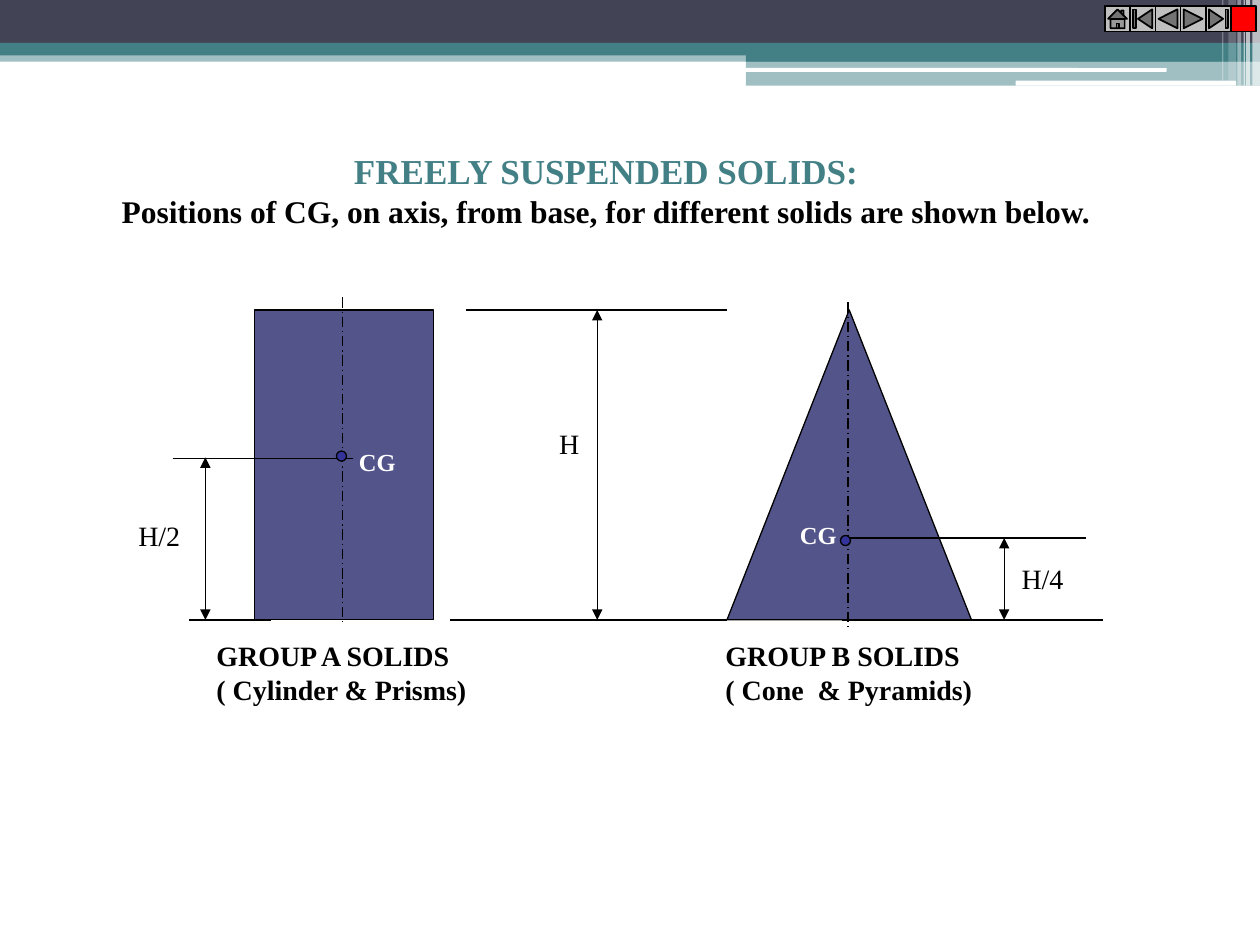
from lxml import etree
from pptx import Presentation
from pptx.dml.color import RGBColor
from pptx.enum.dml import MSO_LINE
from pptx.enum.shapes import MSO_CONNECTOR, MSO_SHAPE
from pptx.enum.text import MSO_ANCHOR, MSO_AUTO_SIZE, PP_ALIGN
from pptx.oxml.ns import qn
from pptx.util import Inches, Pt

RECT = MSO_SHAPE.RECTANGLE
ROUND = MSO_SHAPE.ROUNDED_RECTANGLE
CONE = MSO_SHAPE.ISOSCELES_TRIANGLE
OVAL = MSO_SHAPE.OVAL
BUTTONS = [
    MSO_SHAPE.ACTION_BUTTON_HOME,
    MSO_SHAPE.ACTION_BUTTON_BEGINNING,
    MSO_SHAPE.ACTION_BUTTON_BACK_OR_PREVIOUS,
    MSO_SHAPE.ACTION_BUTTON_FORWARD_OR_NEXT,
    MSO_SHAPE.ACTION_BUTTON_END,
    MSO_SHAPE.ACTION_BUTTON_CUSTOM,
]
STRAIGHT = MSO_CONNECTOR.STRAIGHT
DASH = MSO_LINE.LONG_DASH_DOT
CENTER = PP_ALIGN.CENTER
TOP_ANCHOR = MSO_ANCHOR.TOP
GROW = MSO_AUTO_SIZE.SHAPE_TO_FIT_TEXT

FONT = "Times New Roman"
COLORS = {
    "teal": "438086",
    "slate": "424456",
    "solid": "53548A",
    "dot": "333399",
    "gray": "C0C0C0",
    "red": "FF0000",
    "black": "000000",
    "white": "FFFFFF",
}
TOP, BASE = 2.46, 4.92  # levels of the solids


def rgb(name):
    return RGBColor.from_string(COLORS[name])


def add_shape(slide, kind, box, fill, line=0, alpha=100):
    shape = slide.shapes.add_shape(kind, *map(Inches, box))
    shape.shadow.inherit = False
    shape.fill.solid()
    shape.fill.fore_color.rgb = rgb(fill)
    if alpha < 100:
        color = shape._element.spPr.find(qn("a:solidFill"))[0]
        etree.SubElement(color, qn("a:alpha"), val=str(alpha * 1000))
    if line:
        shape.line.color.rgb = rgb("black")
        shape.line.width = Pt(line)
    else:
        shape.line.fill.background()
    return shape


def add_line(slide, x1, y1, x2, y2, dash=None, arrows=False):
    line = slide.shapes.add_connector(STRAIGHT, *map(Inches, (x1, y1, x2, y2)))
    line.line.color.rgb = rgb("black")
    line.line.width = Pt(0.75)
    if dash:
        line.line.dash_style = dash
    props = line._element.spPr
    if arrows:
        stroke = props.find(qn("a:ln"))
        for end in ("a:headEnd", "a:tailEnd"):
            etree.SubElement(stroke, qn(end), type="triangle")
    etree.SubElement(props, qn("a:effectLst"))


def style(para, size, color, bold):
    for run in para.runs:
        run.font.name = FONT
        run.font.size = Pt(size)
        run.font.bold = bold
        run.font.color.rgb = rgb(color)


def add_text(slide, box, text, size=16, color="black", bold=False):
    frame = slide.shapes.add_textbox(*map(Inches, box)).text_frame
    frame.word_wrap = False
    frame.auto_size = GROW
    frame.text = text
    for para in frame.paragraphs:
        style(para, size, color, bold)


def add_title(slide):
    title = slide.shapes.title
    title.left, title.top = Inches(0.85), Inches(1.14)
    title.width, title.height = Inches(7.92), Inches(0.73)
    frame = title.text_frame
    frame.word_wrap = False
    frame.auto_size = GROW
    frame.vertical_anchor = TOP_ANCHOR
    frame.text = (
        "FREELY SUSPENDED SOLIDS:\n"
        "Positions of CG, on axis, from base, for different solids are shown below."
    )
    for para, size, color in zip(frame.paragraphs, (20, 18), ("teal", "black")):
        para.alignment = CENTER
        style(para, size, color, True)


def add_header(slide):
    # Bands
    for box, fill, alpha in [
        ((0, 0.4, 10, 0.09), "teal", 50),
        ((0, 0, 10, 0.34), "slate", 100),
        ((0, 0.34, 10, 0.1), "teal", 100),
        ((5.92, 0.39, 4.08, 0.1), "teal", 100),
        ((5.92, 0.48, 4.08, 0.2), "teal", 50),
    ]:
        add_shape(slide, RECT, box, fill, alpha=alpha)
    for box in [(5.91, 0.54, 3.35, 0.03), (8.06, 0.64, 1.75, 0.04)]:
        add_shape(slide, ROUND, box, "white")
    # Thin stripes at the right edge
    for left, width, height, alpha in [
        (9.94, 0.06, 0.68, 65),
        (9.89, 0.03, 0.68, 65),
        (9.87, 0.01, 0.68, 60),
        (9.82, 0.03, 0.68, 40),
        (9.75, 0.06, 0.64, 20),
        (9.7, 0.01, 0.64, 30),
    ]:
        add_shape(slide, RECT, (left, 0, width, height), "white", alpha=alpha)


def add_solids(slide):
    add_shape(slide, RECT, (2.02, TOP, 1.42, BASE - TOP), "solid", 0.75)
    add_shape(slide, CONE, (5.77, TOP, 1.94, BASE - TOP), "solid", 0.75)
    # Axes
    for x, top in [(2.72, 2.36), (6.73, 2.4)]:
        add_line(slide, x, top, x, top + 2.59, dash=DASH)
    # Level lines
    for left, right, y in [
        (3.7, 5.77, TOP),
        (3.57, 5.77, BASE),
        (1.5, 2.15, BASE),
        (6.68, 8.75, BASE),
        (1.37, 2.8, 3.64),
        (6.68, 8.62, 4.27),
    ]:
        add_line(slide, left, y, right, y)
    # Heights
    for x, top in [(4.74, TOP), (1.63, 3.63), (7.97, 4.27)]:
        add_line(slide, x, top, x, BASE, arrows=True)


def add_labels(slide):
    for box, text in [
        ((4.34, 3.34, 0.36, 0.37), "H"),
        ((1, 4.07, 0.53, 0.37), "H/2"),
        ((8.01, 4.41, 0.53, 0.37), "H/4"),
    ]:
        add_text(slide, box, text)
    for left, width, text in [
        (1.62, 2.2, "GROUP A SOLIDS\n( Cylinder & Prisms)"),
        (5.66, 2.17, "GROUP B SOLIDS\n( Cone  & Pyramids)"),
    ]:
        add_text(slide, (left, 5.02, width, 0.63), text, bold=True)
    # Centres of gravity
    for x, y, dot_x, dot_y in [(2.75, 3.5, 2.67, 3.58), (6.25, 4.08, 6.67, 4.25)]:
        add_text(slide, (x, y, 0.49, 0.33), "CG", 14, "white", True)
        add_shape(slide, OVAL, (dot_x, dot_y, 0.08, 0.08), "dot", 0.75)


def add_buttons(slide):
    side = 0.2
    for i, kind in enumerate(BUTTONS):
        fill = "red" if kind == BUTTONS[-1] else "gray"
        add_shape(slide, kind, (8.77 + i * side, 0.05, side, side), fill, 1)


def main():
    deck = Presentation()
    deck.slide_width, deck.slide_height = Inches(10), Inches(7.5)
    slide = deck.slides.add_slide(deck.slide_layouts[5])
    add_header(slide)
    add_title(slide)
    add_solids(slide)
    add_labels(slide)
    add_buttons(slide)
    deck.save("out.pptx")


if __name__ == "__main__":
    main()
